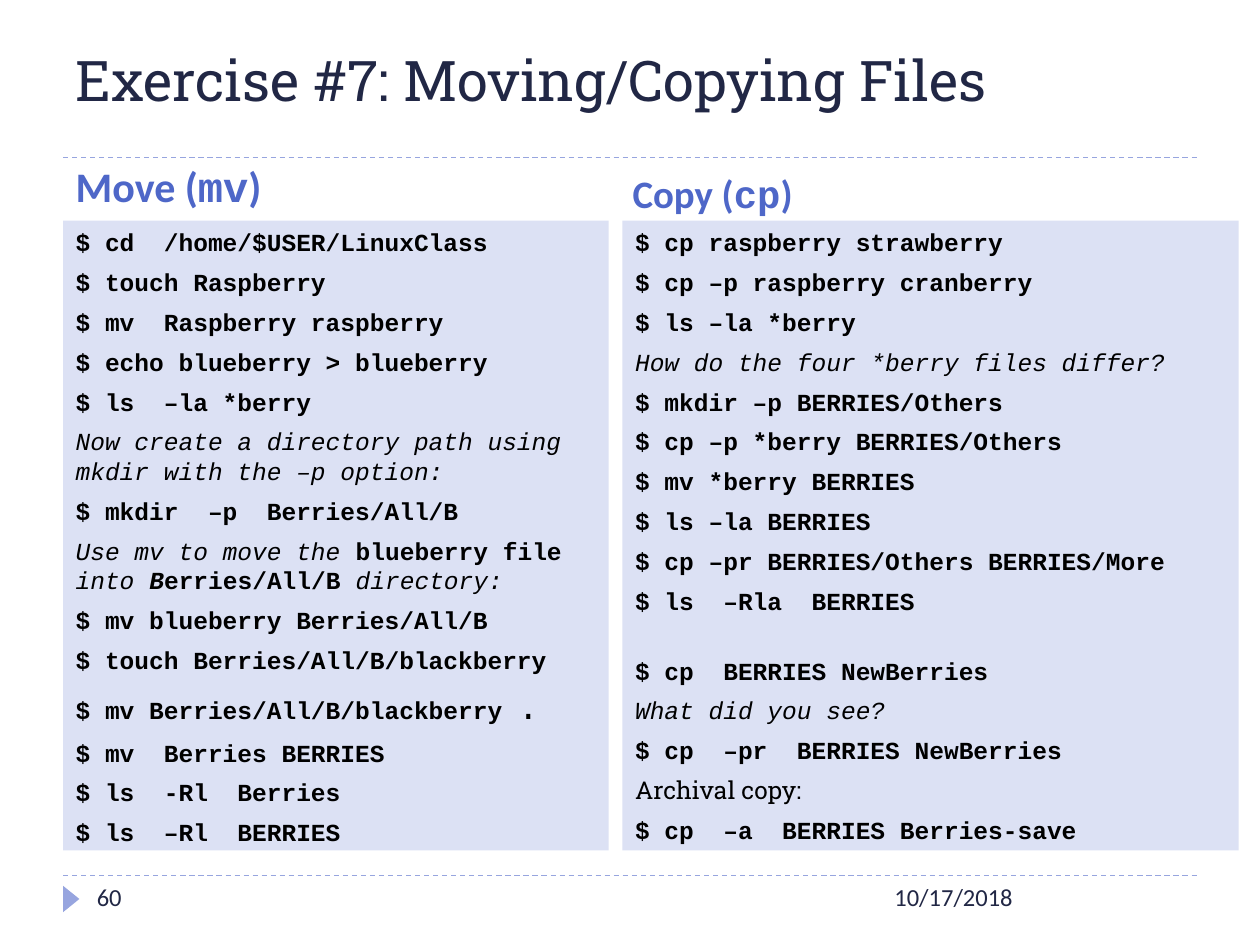
"""Build the slide of the moving and copying files exercise."""
from typing import NamedTuple

from lxml import etree
from pptx import Presentation
from pptx import util as u
from pptx.dml.color import RGBColor
from pptx.enum import dml, shapes, text
from pptx.oxml.ns import qn

PX = 9144
MONO, SANS, SLAB = "Courier New", "Calibri", "Roboto Slab"
NAVY, BLUE, LILAC, PANEL, BLACK = "212745", "4E67C8", "97A5DF", "DCE1F4", "000000"


class Box(NamedTuple):
    left: int
    top: int
    width: int
    height: int


class Run(NamedTuple):
    text: str
    bold: bool = False
    italic: bool = False
    font: str = MONO
    size: float = 14
    color: str = BLACK


class Column(NamedTuple):
    heading_id: int
    heading_box: Box
    heading: list[Run]
    list_id: int
    list_box: Box
    lines: list[list[Run]]


def command(words: str) -> list[Run]:
    """Return a line holding one shell command."""
    return [Run(words, bold=True)]


def note(words: str) -> list[Run]:
    """Return a line holding one italic remark."""
    return [Run(words, italic=True)]


def heading(verb: str, program: str, size: float) -> list[Run]:
    """Return a column heading with the program name in monospace."""
    parts = ((f"{verb} (", SANS), (program, MONO), (")", SANS))
    return [Run(words, True, False, font, size, BLUE) for words, font in parts]


COLUMNS = [
    Column(1, Box(50, 122, 433, 44), heading("Move", "mv", 24),
           2, Box(50, 175, 433, 500), [
        command("$ cd  /home/$USER/LinuxClass"),
        command("$ touch Raspberry"),
        command("$ mv  Raspberry raspberry"),
        command("$ echo blueberry > blueberry"),
        command("$ ls  –la *berry"),
        note("Now create a directory path using mkdir with the –p option:"),
        command("$ mkdir  –p  Berries/All/B"),
        [Run("Use mv to move the ", italic=True), Run("blueberry file", bold=True),
         Run(" into ", italic=True), Run("B", bold=True, italic=True),
         Run("erries/All/B", bold=True), Run(" directory:", italic=True)],
        command("$ mv blueberry Berries/All/B"),
        command("$ touch Berries/All/B/blackberry"),
        [Run("$ mv Berries/All/B/blackberry ", bold=True), Run(".", size=20)],
        command("$ mv  Berries BERRIES"),
        command("$ ls  -Rl  Berries"),
        command("$ ls  –Rl  BERRIES"),
    ]),
    Column(3, Box(492, 130, 433, 44), heading("Copy", "cp", 22.2),
           4, Box(494, 175, 489, 500), [
        command("$ cp raspberry strawberry"),
        command("$ cp –p raspberry cranberry"),
        command("$ ls –la *berry"),
        note("How do the four *berry files differ?"),
        command("$ mkdir –p BERRIES/Others"),
        command("$ cp –p *berry BERRIES/Others"),
        command("$ mv *berry BERRIES"),
        command("$ ls –la BERRIES"),
        command("$ cp –pr BERRIES/Others BERRIES/More"),
        command("$ ls  –Rla  BERRIES"),
        [Run("\n"), Run("$ cp  BERRIES NewBerries", bold=True)],
        note("What did you see?"),
        command("$ cp  –pr  BERRIES NewBerries"),
        [Run("Archival copy:", font=SLAB)],
        command("$ cp  –a  BERRIES Berries-save"),
    ]),
]


def rgb(value: str) -> RGBColor:
    """Turn a hex string into a colour."""
    return RGBColor.from_string(value)


def place(shape, box: Box) -> None:
    """Move and size a shape in px."""
    shape.left, shape.top, shape.width, shape.height = (side * PX for side in box)


def add_break(paragraph, run: Run) -> None:
    """Add a line break as tall as a line of the run's font."""
    paragraph.add_line_break()
    properties = etree.SubElement(paragraph._p[-1], qn("a:rPr"), sz=str(int(run.size * 100)))
    etree.SubElement(properties, qn("a:latin"), typeface=run.font)


def add_run(paragraph, run: Run) -> None:
    """Add one formatted run, or a line break for a newline."""
    if run.text == "\n":
        add_break(paragraph, run)
        return
    item = paragraph.add_run()
    item.text = run.text
    item.font.name = run.font
    item.font.size = u.Pt(run.size)
    item.font.bold = run.bold
    item.font.italic = run.italic
    item.font.color.rgb = rgb(run.color)


def write(shape, lines: list[list[Run]], anchor=text.MSO_ANCHOR.TOP) -> None:
    """Fill a shape with unbulleted, left-aligned lines."""
    frame = shape.text_frame
    frame.word_wrap = True
    frame.auto_size = text.MSO_AUTO_SIZE.NONE
    frame.vertical_anchor = anchor
    for index, line in enumerate(lines):
        paragraph = frame.add_paragraph() if index else frame.paragraphs[0]
        properties = paragraph._p.get_or_add_pPr()
        properties.set("marL", "0")
        properties.set("indent", "0")
        etree.SubElement(properties, qn("a:buNone"))
        paragraph.alignment = text.PP_ALIGN.LEFT
        paragraph.space_before = u.Pt(6 if index else 0)
        for run in line:
            add_run(paragraph, run)


def add_rule(slide, top: int) -> None:
    """Draw a dashed rule across the slide."""
    rule = slide.shapes.add_connector(
        shapes.MSO_CONNECTOR.STRAIGHT, 50 * PX, top * PX, 950 * PX, top * PX)
    rule.line.color.rgb = rgb(LILAC)
    rule.line.width = u.Pt(0.75)
    rule.line.dash_style = dml.MSO_LINE.DASH
    etree.SubElement(rule._element.spPr, qn("a:effectLst"))


def add_marker(slide, box: Box) -> None:
    """Draw the triangle that points at the page number."""
    marker = slide.shapes.add_shape(
        shapes.MSO_SHAPE.ISOSCELES_TRIANGLE, *(side * PX for side in box))
    marker.rotation = 90
    marker.shadow.inherit = False
    marker.fill.solid()
    marker.fill.fore_color.rgb = rgb(LILAC)
    marker.line.fill.background()


def add_column(slide, column: Column) -> None:
    """Fill one heading and the command list under it."""
    title = slide.placeholders[column.heading_id]
    place(title, column.heading_box)
    write(title, [column.heading])
    panel = slide.placeholders[column.list_id]
    place(panel, column.list_box)
    panel.fill.solid()
    panel.fill.fore_color.rgb = rgb(PANEL)
    write(panel, column.lines)


def add_footer(slide, words: str, box: Box) -> None:
    """Add one footer text."""
    shape = slide.shapes.add_textbox(*(side * PX for side in box))
    write(shape, [[Run(words, font=SANS, color=NAVY)]])


def main() -> None:
    """Build and save the presentation."""
    presentation = Presentation()
    presentation.slide_width, presentation.slide_height = 1000 * PX, 750 * PX
    slide = presentation.slides.add_slide(presentation.slide_layouts[4])
    for top in (695, 125):
        add_rule(slide, top)
    add_marker(slide, Box(46, 707, 21, 13))
    title = slide.shapes.title
    place(title, Box(50, 25, 892, 75))
    title_run = Run("Exercise #7: Moving/Copying Files", font=SLAB, size=32, color=NAVY)
    write(title, [[title_run]], text.MSO_ANCHOR.MIDDLE)
    for column in COLUMNS:
        add_column(slide, column)
    add_footer(slide, "10/17/2018", Box(700, 695, 250, 40))
    add_footer(slide, "60", Box(67, 695, 217, 40))
    presentation.save("out.pptx")


if __name__ == "__main__":
    main()
